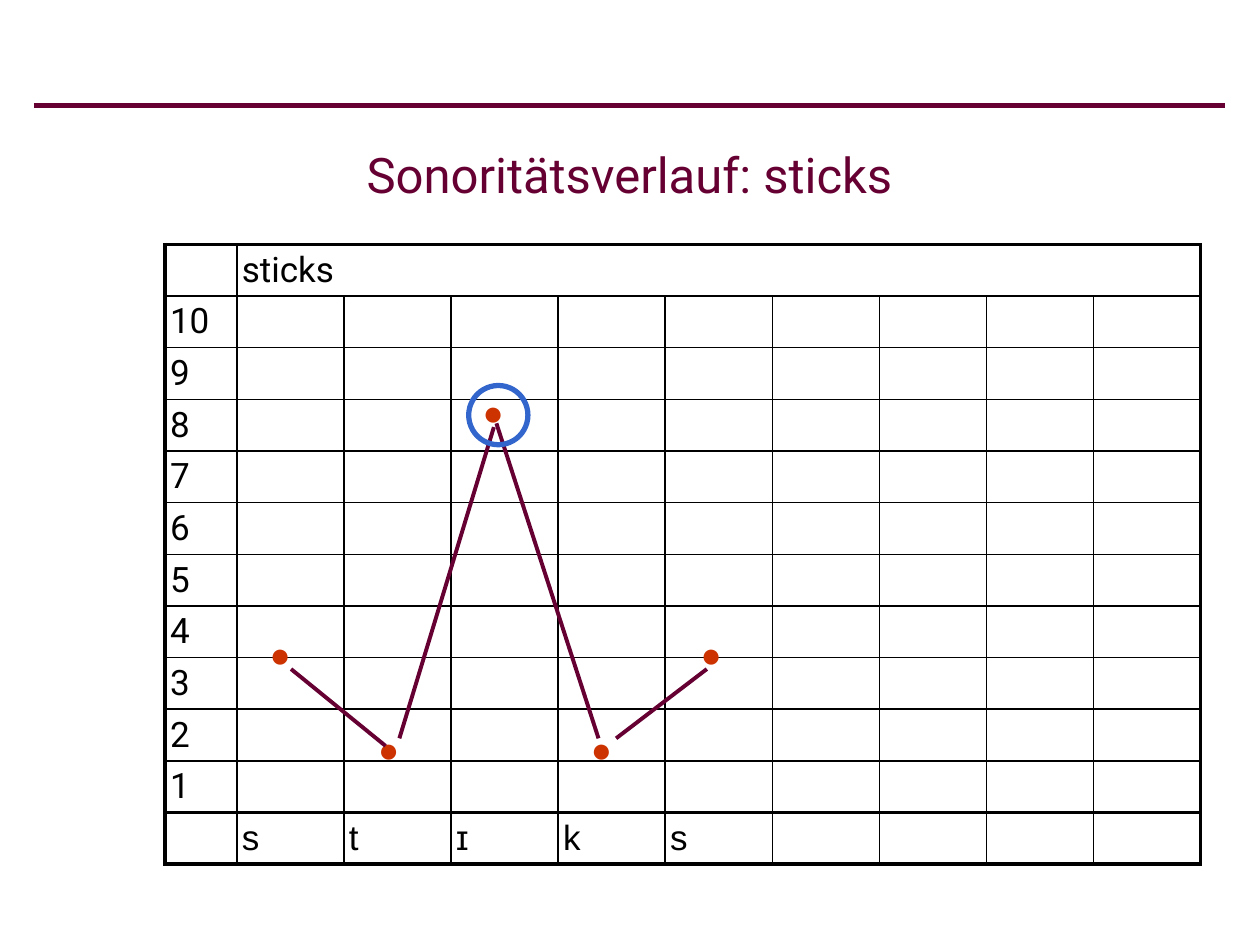
from lxml import etree
from pptx import Presentation
from pptx.dml.color import RGBColor
from pptx.enum import shapes, text
from pptx.oxml import ns
from pptx.util import Inches, Pt

PLUM = RGBColor(0x66, 0x00, 0x33)
BLACK = RGBColor(0x00, 0x00, 0x00)
RED = RGBColor(0xCC, 0x33, 0x00)
BLUE = RGBColor(0x33, 0x66, 0xCC)

SOUNDS = ["s", "t", "ɪ", "k", "s"]
LEVELS = 10
ROWS, COLS = LEVELS + 2, 10
THIN, THICK = 1, 2.25

# Offsets from the top left corner of the table
DOTS = [(0.83, 3.12), (1.69, 3.87), (2.52, 1.2), (3.38, 3.87), (4.25, 3.12)]
CURVE = [
    ((1.86, 3.92), (2.61, 1.45)),
    ((3.58, 3.92), (4.3, 3.37)),
    ((3.44, 3.92), (2.63, 1.42)),
    ((1.75, 3.98), (1, 3.37)),
]
PEAK = (2.41, 1.12)


def format_text(p, font, size, color):
    for r in p.runs:
        r.font.name = font
        r.font.size = Pt(size)
        r.font.color.rgb = color


def add_line(parent, start, end, width):
    ends = [Inches(v) for v in (*start, *end)]
    line = parent.add_connector(shapes.MSO_CONNECTOR.STRAIGHT, *ends)
    line.line.color.rgb = PLUM
    line.line.width = Pt(width)
    etree.SubElement(line._element.spPr, ns.qn("a:effectLst"))


def add_title(s, x, y, w, h):
    add_line(s.shapes, (x, y), (x + w, y), 3)
    title = s.shapes.title
    title.left, title.top = Inches(x), Inches(y)
    title.width, title.height = Inches(w), Inches(h)
    tf = title.text_frame
    tf.text = "Sonoritätsverlauf: sticks"
    tf.vertical_anchor = text.MSO_ANCHOR.MIDDLE
    p = tf.paragraphs[0]
    p.alignment = text.PP_ALIGN.CENTER
    format_text(p, "Roboto", 28, PLUM)


def set_borders(cell, widths):
    tcPr = cell._tc.get_or_add_tcPr()
    for i, (side, width) in enumerate(zip("LRTB", widths)):
        ln = etree.Element(ns.qn(f"a:ln{side}"), w=str(Pt(width)))
        fill = etree.SubElement(ln, ns.qn("a:solidFill"))
        etree.SubElement(fill, ns.qn("a:srgbClr"), val=str(BLACK))
        tcPr.insert(i, ln)


def add_grid(s, x, y, w, h):
    frame = s.shapes.add_table(ROWS, COLS, Inches(x), Inches(y), Inches(w), Inches(h))
    table = frame.table
    table.first_row = table.horz_banding = False
    label_width = 0.57
    for c, column in enumerate(table.columns):
        column.width = Inches(label_width if c == 0 else (w - label_width) / (COLS - 1))
    for row in table.rows:
        row.height = Inches(h / ROWS)
    table.cell(0, 1).merge(table.cell(0, COLS - 1))

    # Word on top, sonority levels on the left, sounds at the bottom
    labels = {(0, 1): "sticks"}
    labels.update({(r, 0): str(LEVELS + 1 - r) for r in range(1, LEVELS + 1)})
    labels.update({(ROWS - 1, c): sound for c, sound in enumerate(SOUNDS, 1)})

    for r in range(ROWS):
        for c in range(COLS):
            cell = table.cell(r, c)
            cell.fill.background()
            cell.vertical_anchor = text.MSO_ANCHOR.MIDDLE
            cell.margin_left = cell.margin_right = Inches(0.04)
            cell.margin_top = cell.margin_bottom = Inches(0.04)
            thick = (
                c == 0,
                c == COLS - 1 or (r, c) == (0, 1),
                r in (0, ROWS - 1),
                r >= ROWS - 2,
            )
            set_borders(cell, [THICK if t else THIN for t in thick])
            if (r, c) in labels:
                cell.text = labels[r, c]
                font = "Arial" if r == ROWS - 1 else "Roboto"
                format_text(cell.text_frame.paragraphs[0], font, 20, BLACK)


def add_curve(s, x, y):
    group = s.shapes.add_group_shape().shapes

    # Sonority of each sound
    for dx, dy in DOTS:
        sp = group.add_textbox(Inches(x + dx), Inches(y + dy), Inches(0.28), Inches(0.3))
        tf = sp.text_frame
        tf.word_wrap = True
        tf.margin_left = tf.margin_right = tf.margin_top = tf.margin_bottom = 0
        tf.text = "●"
        p = tf.paragraphs[0]
        p.line_spacing = 0.9
        format_text(p, "Arial", 20, RED)

    # Lines between the dots
    for (x1, y1), (x2, y2) in CURVE:
        add_line(group, (x + x1, y + y1), (x + x2, y + y2), 2.25)

    # Ring around the peak
    dx, dy = PEAK
    ring = s.shapes.add_shape(shapes.MSO_SHAPE.OVAL, Inches(x + dx), Inches(y + dy),
                              Inches(0.47), Inches(0.47))
    ring.shadow.inherit = False
    ring.fill.background()
    ring.line.color.rgb = BLUE
    ring.line.width = Pt(3)


def main():
    prs = Presentation()
    prs.slide_width, prs.slide_height = Inches(10), Inches(7.5)
    s = prs.slides.add_slide(prs.slide_layouts[5])
    add_title(s, 0.27, 0.84, 9.45, 1.08)
    add_grid(s, 1.31, 1.94, 8.22, 4.92)
    add_curve(s, 1.31, 1.94)
    prs.save("out.pptx")


if __name__ == "__main__":
    main()
